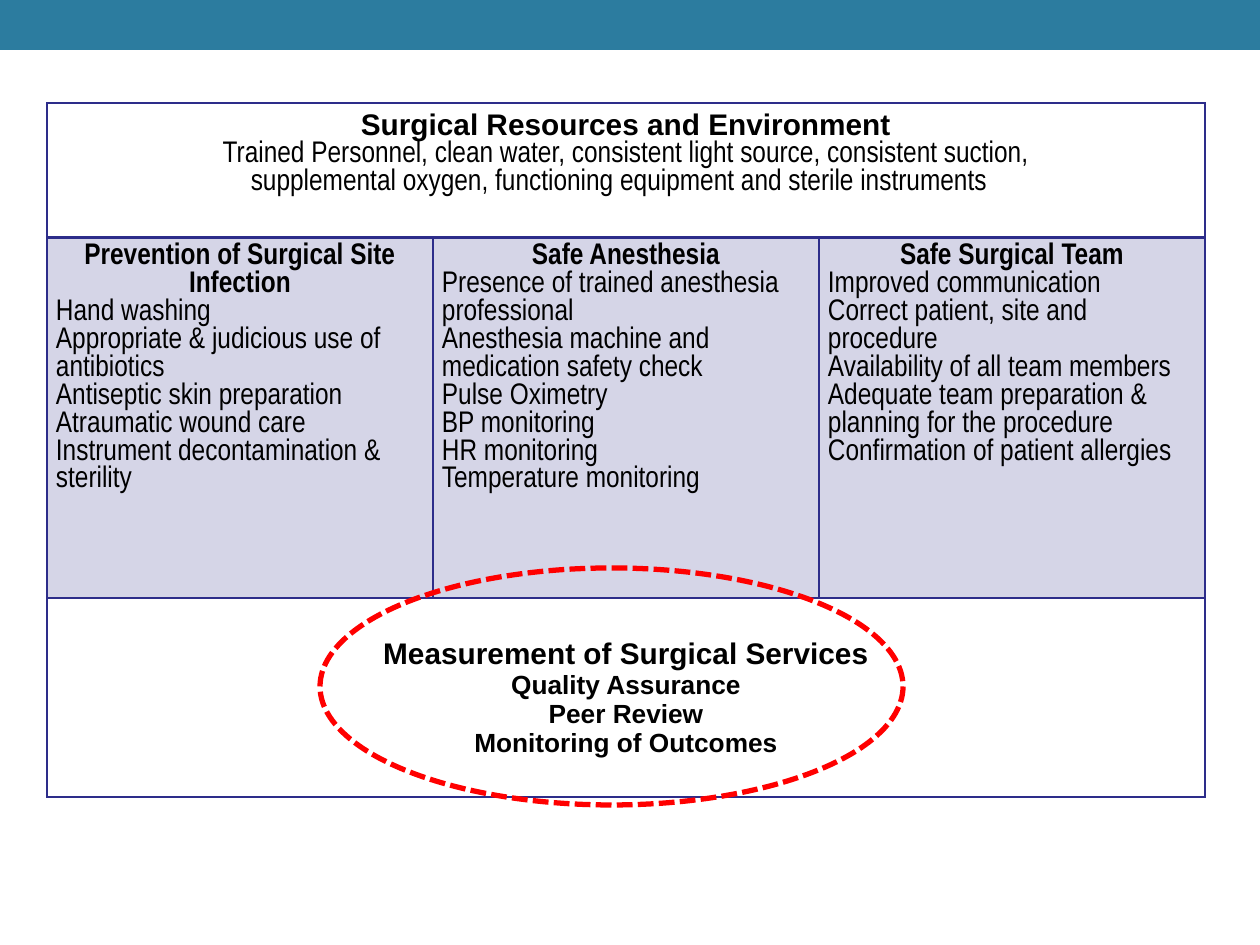
"""Draw the surgical safety framework table on one slide."""
from dataclasses import dataclass
from lxml.etree import SubElement as Sub
from pptx import Presentation as Deck
from pptx.dml.color import RGBColor as Rgb
from pptx.enum.dml import MSO_LINE as Dash
from pptx.enum.shapes import MSO_SHAPE as Kind
from pptx.enum.text import MSO_ANCHOR as Anchor, PP_ALIGN as Align
from pptx.oxml.ns import qn
from pptx.util import Pt


@dataclass(frozen=True)
class Theme:
    bar: str = "2C7C9F"
    rule: str = "2D2D8A"
    ink: str = "000000"
    ring: str = "FF0000"
    tint: int = 20
    wide: str = "Arial"
    slim: str = "Arial Narrow"
    big: int = 17
    small: int = 15
    thin: int = 1
    thick: int = 2
    bold: int = 3


def apply(item, form):
    for name, value in form.items():
        setattr(item, name, value)


class Page:
    def __init__(self, theme, scale=914400 / 126):
        self.theme, self.scale = theme, scale
        deck = self.deck = Deck()
        apply(deck, {"slide_width": self.emu(1260), "slide_height": self.emu(945)})
        self.slide = deck.slides.add_slide(deck.slide_layouts[6])

    def emu(self, size):
        return round(size * self.scale)

    def shape(self, kind, box, fill=None, line=None):
        item = self.slide.shapes.add_shape(kind, *map(self.emu, box))
        item.shadow.inherit = False
        if fill:
            item.fill.solid()
            item.fill.fore_color.rgb = Rgb.from_string(fill)
        else:
            item.fill.background()
        if line:
            item.line.color.rgb = Rgb.from_string(line)
            apply(item.line, {"width": Pt(self.theme.bold), "dash_style": Dash.SQUARE_DOT})
        else:
            item.line.fill.background()

    def table(self, spot, cols, rows):
        box = (*spot, sum(cols), sum(rows))
        frame = self.slide.shapes.add_table(len(rows), len(cols), *map(self.emu, box))
        grid = frame.table
        apply(grid, {"first_row": False, "horz_banding": False})
        for col, size in zip(grid.columns, cols):
            col.width = self.emu(size)
        for row, size in zip(grid.rows, rows):
            row.height = self.emu(size)
        return grid

    def edge(self, cell, top, base):
        props = cell._tc.get_or_add_tcPr()
        thin = self.theme.thin
        for side, size in zip("LRTB", (thin, thin, top, base)):
            line = Sub(props, qn(f"a:ln{side}"), w=str(Pt(size)))
            Sub(Sub(line, qn("a:solidFill")), qn("a:srgbClr"), val=self.theme.rule)

    def shade(self, cell):
        cell.fill.solid()
        cell.fill.fore_color.rgb = Rgb.from_string(self.theme.rule)
        tone = cell._tc.tcPr.find(f"{qn('a:solidFill')}/{qn('a:srgbClr')}")
        Sub(tone, qn("a:alpha"), val=str(self.theme.tint * 1000))

    def label(self, cell, lines, anchor=Anchor.TOP):
        side, top = self.emu(9), self.emu(5)
        apply(cell, {"margin_left": side, "margin_right": side, "margin_top": top,
                     "margin_bottom": top, "vertical_anchor": anchor})
        frame = cell.text_frame
        for i, (text, align, form) in enumerate(lines):
            para = frame.add_paragraph() if i else frame.paragraphs[0]
            para.alignment = align
            run = para.add_run()
            run.text = text
            apply(run.font, form)
            run.font.color.rgb = Rgb.from_string(self.theme.ink)


TOP = ("Surgical Resources and Environment",
       "Trained Personnel, clean water, consistent light source, consistent suction,",
       "supplemental oxygen, functioning equipment and sterile instruments  ")
MID = (
    ("Prevention of Surgical Site Infection", "Hand washing",
     "Appropriate & judicious use of antibiotics", "Antiseptic skin preparation",
     "Atraumatic wound care", "Instrument decontamination & sterility"),
    ("Safe Anesthesia", "Presence of trained anesthesia professional",
     "Anesthesia machine and medication safety check", "Pulse Oximetry",
     "BP monitoring", "HR monitoring", "Temperature monitoring"),
    ("Safe Surgical Team", "Improved communication",
     "Correct patient, site and procedure", "Availability of all team members",
     "Adequate team preparation & planning for the procedure",
     "Confirmation of patient allergies"),
)
BASE = ("Measurement of Surgical Services", "Quality Assurance", "Peer Review",
        "Monitoring of Outcomes")


def stack(lines, head, body, align):
    return [(text, align if i else Align.CENTER, body if i else head)
            for i, text in enumerate(lines)]


def main():
    theme = Theme()
    page = Page(theme)
    page.shape(Kind.RECTANGLE, (0, 0, 1260, 50), fill=theme.bar)
    grid = page.table((47, 103), [386] * 3, (135, 360, 199))
    thin, thick = theme.thin, theme.thick
    for i, (top, base) in enumerate(((thin, thick), (thick, thin), (thin, thin))):
        for cell in grid.rows[i].cells:
            page.edge(cell, top, base)
            if i == 1:
                page.shade(cell)
            else:
                cell.fill.background()
    for i in (0, 2):
        grid.cell(i, 0).merge(grid.cell(i, 2))
    head = {"name": theme.wide, "size": Pt(theme.big), "bold": True}
    body = {**head, "name": theme.slim, "bold": False}
    page.label(grid.cell(0, 0), stack(TOP, head, body, Align.CENTER))
    for i, lines in enumerate(MID):
        page.label(grid.cell(1, i), stack(lines, {**body, "bold": True}, body, Align.LEFT))
    small = {**head, "size": Pt(theme.small)}
    page.label(grid.cell(2, 0), stack(BASE, head, small, Align.CENTER), Anchor.MIDDLE)
    page.shape(Kind.OVAL, (320, 568, 583, 237), line=theme.ring)
    page.deck.save("out.pptx")


if __name__ == "__main__":
    main()
